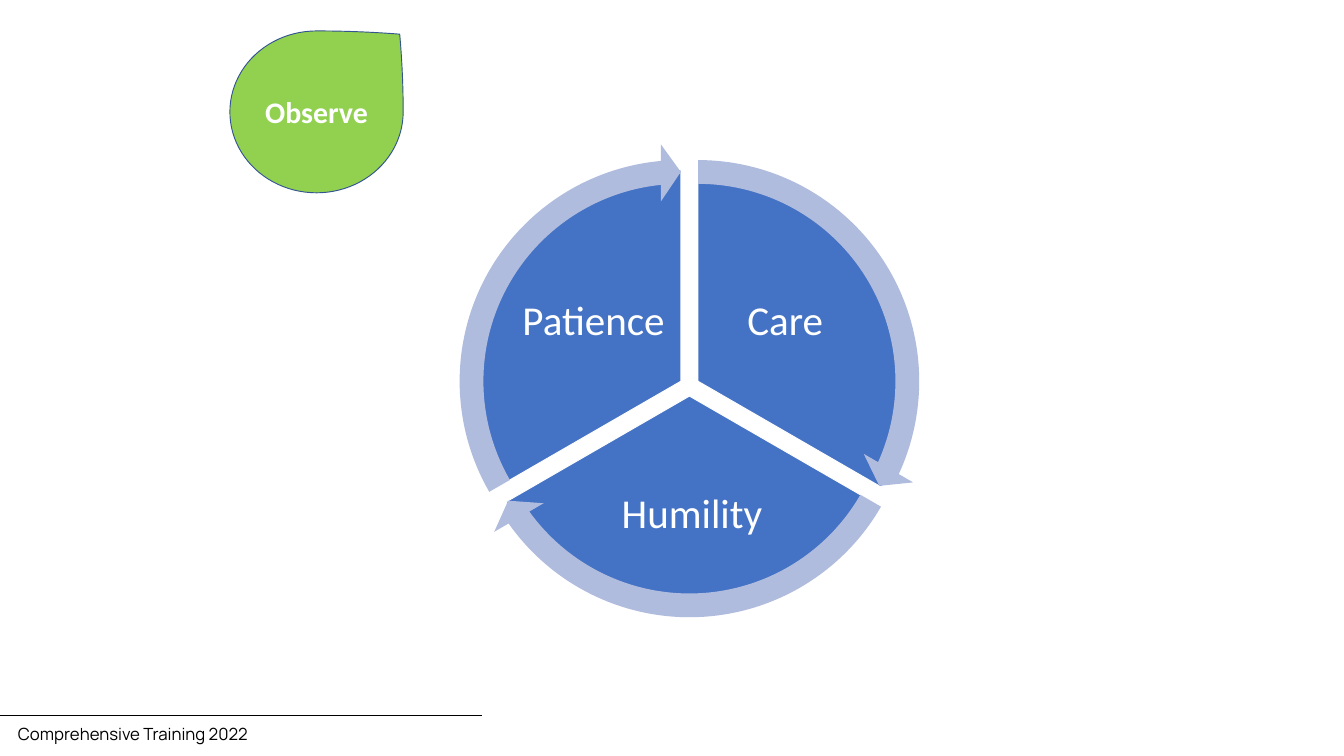
from math import cos, radians, sin

from lxml.etree import SubElement
from pptx import Presentation
from pptx.dml.color import RGBColor
from pptx.enum.shapes import MSO_CONNECTOR, MSO_SHAPE
from pptx.enum.text import MSO_ANCHOR, MSO_AUTO_SIZE, PP_ALIGN
from pptx.oxml.ns import qn
from pptx.util import Cm, Pt

BLUE, PALE_BLUE, DARK_BLUE = "4472C4", "B0BCDE", "325491"
GREEN, WHITE, BLACK = "92D050", "FFFFFF", "000000"
ARROW_BAND, ARROW_TIP, ARROW_HEAD = 0.05, 3.28, 0.06
WEDGES = [
    ("Care", 162, 18, (3.62, -2.41), (5.72, 4.78)),
    ("Humility", 18, 90, (0.1, 4.86), (8.58, 4.19)),
    ("Patience", 90, 162, (-3.62, -2.41), (5.72, 4.78)),
]


def color(value):
    """Turn a hex string into a colour."""
    return RGBColor.from_string(value)


def add_span(para, text, size, font, hue, bold=False):
    """Append a formatted run to a paragraph."""
    span = para.add_run()
    span.text = text
    span.font.size = Pt(size)
    span.font.name = font
    span.font.bold = bold
    span.font.color.rgb = color(hue)


def add_figure(page, kind, box, adjustments, fill, line=None):
    """Place a flat preset shape in a box of centimetres."""
    figure = page.shapes.add_shape(kind, *map(Cm, box))
    figure.shadow.inherit = False
    for index, value in enumerate(adjustments):
        figure.adjustments[index] = value
    figure.fill.solid()
    figure.fill.fore_color.rgb = color(fill)
    if line:
        figure.line.color.rgb = color(line)
        figure.line.width = Pt(1)
    else:
        figure.line.fill.background()
    return figure


def centered(x, y, width, height):
    """Return the box of the given size around a point."""
    return x - width / 2, y - height / 2, width, height


def add_label(page, box, text):
    """Place a wedge caption in the middle of a box."""
    frame = page.shapes.add_textbox(*map(Cm, box)).text_frame
    frame.word_wrap = True
    frame.vertical_anchor = MSO_ANCHOR.MIDDLE
    frame.margin_left = frame.margin_right = Cm(0.15)
    frame.margin_top = frame.margin_bottom = Cm(0.15)
    para = frame.paragraphs[0]
    para.alignment = PP_ALIGN.CENTER
    para.line_spacing = 0.9
    add_span(para, text, 44, "Calibri", WHITE)


def add_wheel(page, left, top, size):
    """Draw three wedges pushed out from the hub, ringed by arrows."""
    hub_x, hub_y = left + size / 2, top + size / 2
    gap, pie_size, ring_size = 0.02 * size, 16, 17.98
    centers = []
    for text, start, end, (shift_x, shift_y), label_size in WEDGES:
        middle = radians(start * 5 / 3 + 60)
        center = hub_x + gap * cos(middle), hub_y + gap * sin(middle)
        centers.append(center)
        add_figure(page, MSO_SHAPE.PIE, centered(*center, pie_size, pie_size),
                   (start, end), BLUE, WHITE)
        add_label(page, centered(hub_x + shift_x, hub_y + shift_y, *label_size), text)
    for (_, start, end, _, _), center in zip(WEDGES, centers):
        add_figure(page, MSO_SHAPE.CIRCULAR_ARROW, centered(*center, ring_size, ring_size),
                   (ARROW_BAND, ARROW_TIP, end - ARROW_TIP, start, ARROW_HEAD), PALE_BLUE)


def add_drop(page, left, top, width, height):
    """Draw the green teardrop with its caption."""
    drop = add_figure(page, MSO_SHAPE.TEAR, (left, top, width, height),
                      (0.96,), GREEN, DARK_BLUE)
    frame = drop.text_frame
    frame.vertical_anchor = MSO_ANCHOR.MIDDLE
    para = frame.paragraphs[0]
    para.alignment = PP_ALIGN.CENTER
    add_span(para, "Observe", 32, "Calibri", WHITE, bold=True)


def add_footer(page, left, top, width, height):
    """Draw the footer rule with the course name below it."""
    box = page.shapes.add_textbox(Cm(left + 0.63), Cm(top + 0.18),
                                  Cm(width - 1.7), Cm(height - 0.18))
    frame = box.text_frame
    frame.word_wrap = True
    frame.auto_size = MSO_AUTO_SIZE.SHAPE_TO_FIT_TEXT
    add_span(frame.paragraphs[0], "Comprehensive Training 2022", 18, "Manrope", BLACK)
    rule = page.shapes.add_connector(MSO_CONNECTOR.STRAIGHT, Cm(left), Cm(top),
                                     Cm(left + width), Cm(top))
    rule.line.color.rgb = color(BLACK)
    rule.line.width = Pt(0.5)
    SubElement(rule._element.spPr, qn("a:effectLst"))


def main():
    """Build the slide and save it."""
    deck = Presentation()
    deck.slide_width, deck.slide_height = Cm(50.8), Cm(28.58)
    page = deck.slides.add_slide(deck.slide_layouts[6])
    add_footer(page, -0.2, 27.05, 18.41, 1.2)
    add_drop(page, 8.69, 1.17, 6.55, 6.12)
    add_wheel(page, 16.69, 5.23, 18.74)
    deck.save("out.pptx")


if __name__ == "__main__":
    main()
